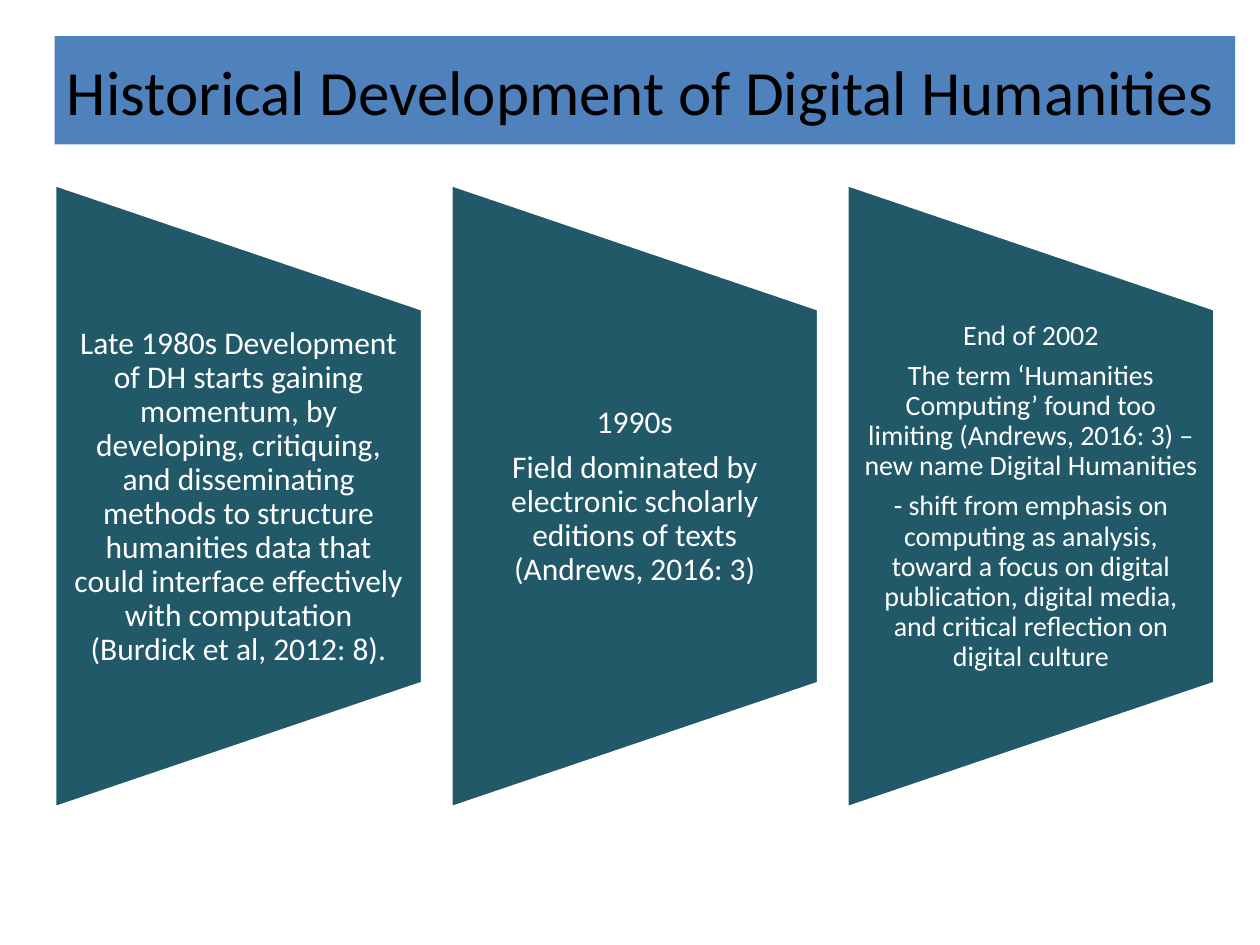
from dataclasses import dataclass

from pptx import Presentation
from pptx.dml.color import RGBColor
from pptx.enum.shapes import MSO_SHAPE
from pptx.enum.text import MSO_ANCHOR, PP_ALIGN
from pptx.util import Pt

RECT = MSO_SHAPE.RECTANGLE
PANEL = MSO_SHAPE.FLOWCHART_MANUAL_OPERATION
MIDDLE = MSO_ANCHOR.MIDDLE
LEFT, CENTER = PP_ALIGN.LEFT, PP_ALIGN.CENTER


@dataclass(frozen=True)
class Theme:
    font: str = "Calibri"
    teal: RGBColor = RGBColor(0x21, 0x59, 0x68)
    blue: RGBColor = RGBColor(0x4F, 0x81, 0xBD)
    white: RGBColor = RGBColor(0xFF, 0xFF, 0xFF)
    black: RGBColor = RGBColor(0, 0, 0)
    title: int = 36
    body: int = 18
    small: int = 16


THEME = Theme()

# Panel grid, in points
EDGE, TOP = 31.2, 105.3
WIDE, TALL = 210.24, 356.4
STEP = 226.4
TEXT_TOP, TEXT_TALL = 177.1, 213.84

# Text size, side inset and paragraphs of each panel
STAGES = [
    (THEME.body, 9, [
        "Late 1980s Development of DH starts gaining momentum, by developing, "
        "critiquing, and disseminating methods to structure humanities data "
        "that could interface effectively with computation "
        "(Burdick et al, 2012: 8).",
    ]),
    (THEME.body, 9, [
        "1990s",
        "Field dominated by electronic scholarly editions of texts "
        "(Andrews, 2016: 3)",
    ]),
    (THEME.small, 8, [
        "End of 2002",
        "The term ‘Humanities Computing’ found too limiting "
        "(Andrews, 2016: 3) – new name Digital Humanities",
        "- shift from emphasis on computing as analysis, toward a focus on "
        "digital publication, digital media, and critical reflection on "
        "digital culture",
    ]),
]


def write(shape, lines, *, size, color, align=CENTER, side=7.2, edge=0,
          lead=1.0, after=0):
    """Fill a shape with formatted paragraphs."""
    frame = shape.text_frame
    frame.word_wrap = True
    frame.vertical_anchor = MIDDLE
    frame.margin_left = frame.margin_right = Pt(side)
    frame.margin_top = frame.margin_bottom = Pt(edge)
    for i, line in enumerate(lines):
        para = frame.add_paragraph() if i else frame.paragraphs[0]
        para.alignment = align
        para.line_spacing = lead
        para.space_after = Pt(after)
        run = para.add_run()
        run.text = line
        run.font.name = THEME.font
        run.font.size = Pt(size)
        run.font.color.rgb = color


def block(slide, kind, x, y, w, h, fill, line=None):
    """Add a solid preset shape, with an outline if a line colour is given."""
    shape = slide.shapes.add_shape(kind, Pt(x), Pt(y), Pt(w), Pt(h))
    shape.shadow.inherit = False
    shape.fill.solid()
    shape.fill.fore_color.rgb = fill
    if line is None:
        shape.line.fill.background()
    else:
        shape.line.color.rgb = line
        shape.line.width = Pt(2)
    return shape


def stage(slide, x, size, side, lines):
    """Add a panel that narrows to the right, with upright text over it."""
    # A quarter turn swaps the sides around a fixed centre
    shift = (TALL - WIDE) / 2
    panel = block(slide, PANEL, x - shift, TOP + shift, TALL, WIDE,
                  THEME.teal, THEME.white)
    panel.rotation = 270
    box = slide.shapes.add_textbox(Pt(x), Pt(TEXT_TOP), Pt(WIDE), Pt(TEXT_TALL))
    write(box, lines, size=size, color=THEME.white, side=side,
          lead=0.9, after=size * 0.35)


def main():
    deck = Presentation()
    deck.slide_width, deck.slide_height = Pt(720), Pt(540)
    slide = deck.slides.add_slide(deck.slide_layouts[6])

    # Three stages in a row
    for i, (size, side, lines) in enumerate(STAGES):
        stage(slide, EDGE + i * STEP, size, side, lines)

    # Title bar
    bar = block(slide, RECT, EDGE, 20.7, 674.6, 61.8, THEME.blue)
    write(bar, ["Historical Development of Digital Humanities"],
          size=THEME.title, color=THEME.black, align=LEFT, edge=3.6)

    deck.save("out.pptx")


if __name__ == "__main__":
    main()
